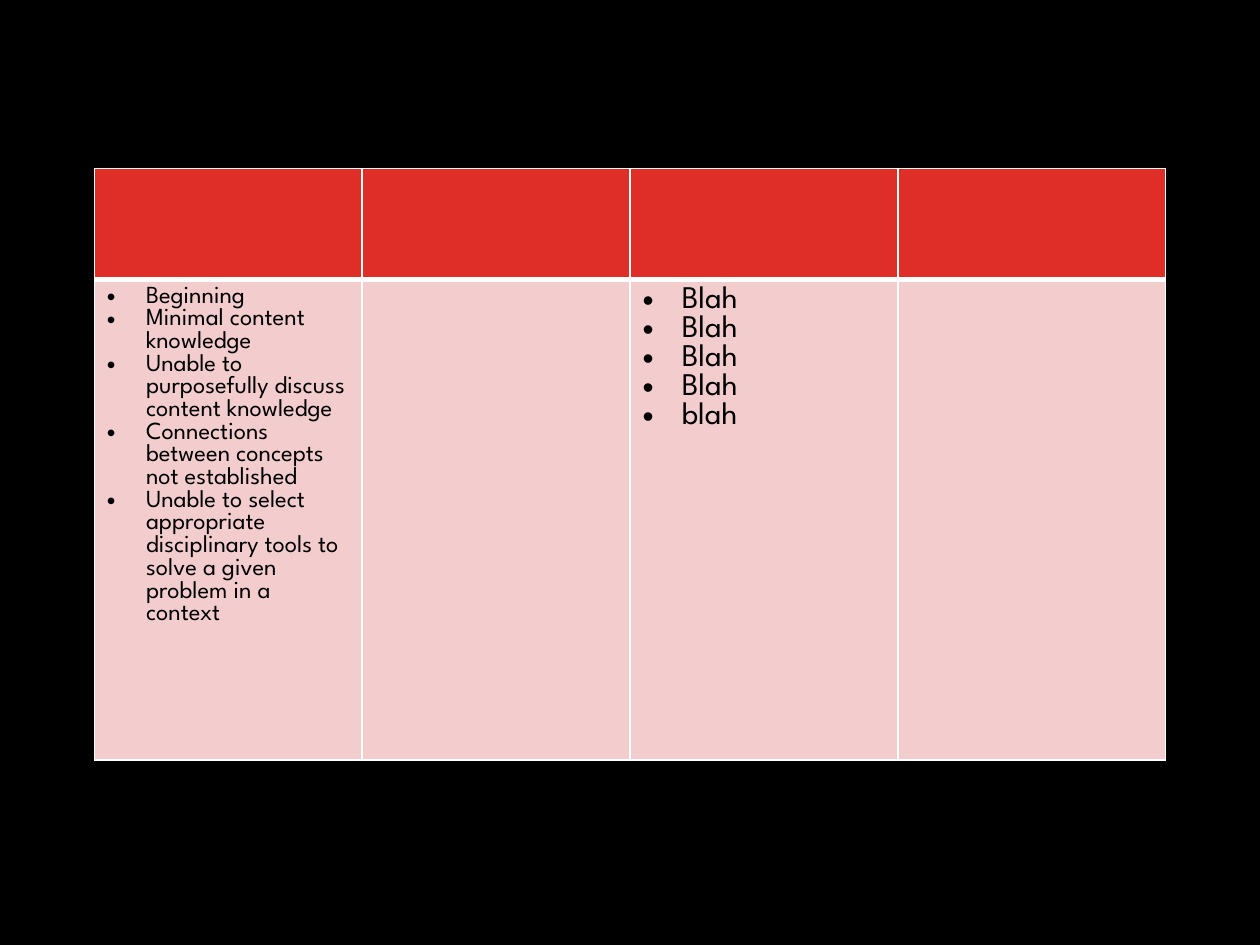
from lxml.etree import SubElement
from pptx import Presentation
from pptx.dml.color import RGBColor
from pptx.oxml import parse_xml
from pptx.oxml.ns import nsdecls, qn
from pptx.util import Cm, Pt

BLACK = RGBColor(0x00, 0x00, 0x00)
WHITE = RGBColor(0xFF, 0xFF, 0xFF)
RED = RGBColor(0xDF, 0x2E, 0x28)
PINK = RGBColor(0xF3, 0xCD, 0xCD)
FONT = "League Spartan"

BULLETS = {
    0: (14, [
        "Beginning",
        "Minimal content knowledge",
        "Unable to purposefully discuss content knowledge",
        "Connections between concepts not established",
        "Unable to select appropriate disciplinary tools to solve a given problem in a context",
    ]),
    2: (18, ["Blah", "Blah", "Blah", "Blah", "blah"]),
}


def style_cell(cell, fill, top_width, bottom_width):
    cell.fill.solid()
    cell.fill.fore_color.rgb = fill
    properties = cell._tc.get_or_add_tcPr()
    widths = {"lnL": 1, "lnR": 1, "lnT": top_width, "lnB": bottom_width}
    for position, (side, width) in enumerate(widths.items()):
        border = parse_xml(
            f'<a:{side} {nsdecls("a")} w="{Pt(width)}"><a:solidFill>'
            f'<a:srgbClr val="{WHITE}"/></a:solidFill></a:{side}>'
        )
        properties.insert(position, border)


def add_bullet(para, text, size):
    properties = para._p.get_or_add_pPr()
    properties.set("marL", str(Cm(0.79)))
    properties.set("indent", str(-Cm(0.79)))
    SubElement(properties, qn("a:buFont"), typeface="Arial")
    SubElement(properties, qn("a:buChar"), char="•")
    span = para.add_run()
    span.text = text
    span.font.name = FONT
    span.font.size = Pt(size)
    span.font.color.rgb = BLACK


deck = Presentation()
deck.slide_width = Cm(25.4)
deck.slide_height = Cm(19.05)
page = deck.slides.add_slide(deck.slide_layouts[6])
page.background.fill.solid()
page.background.fill.fore_color.rgb = BLACK

table = page.shapes.add_table(2, 4, Cm(1.9), Cm(3.4), Cm(21.6), Cm(11.92)).table
table.rows[0].height = Cm(2.24)
table.rows[1].height = Cm(9.68)
for column in table.columns:
    column.width = Cm(5.4)

for index in range(len(table.columns)):
    style_cell(table.cell(0, index), RED, 1, 3)
    style_cell(table.cell(1, index), PINK, 3, 1)

for index, (size, lines) in BULLETS.items():
    frame = table.cell(1, index).text_frame
    for number, line in enumerate(lines):
        para = frame.add_paragraph() if number else frame.paragraphs[0]
        add_bullet(para, line, size)

deck.save("out.pptx")
